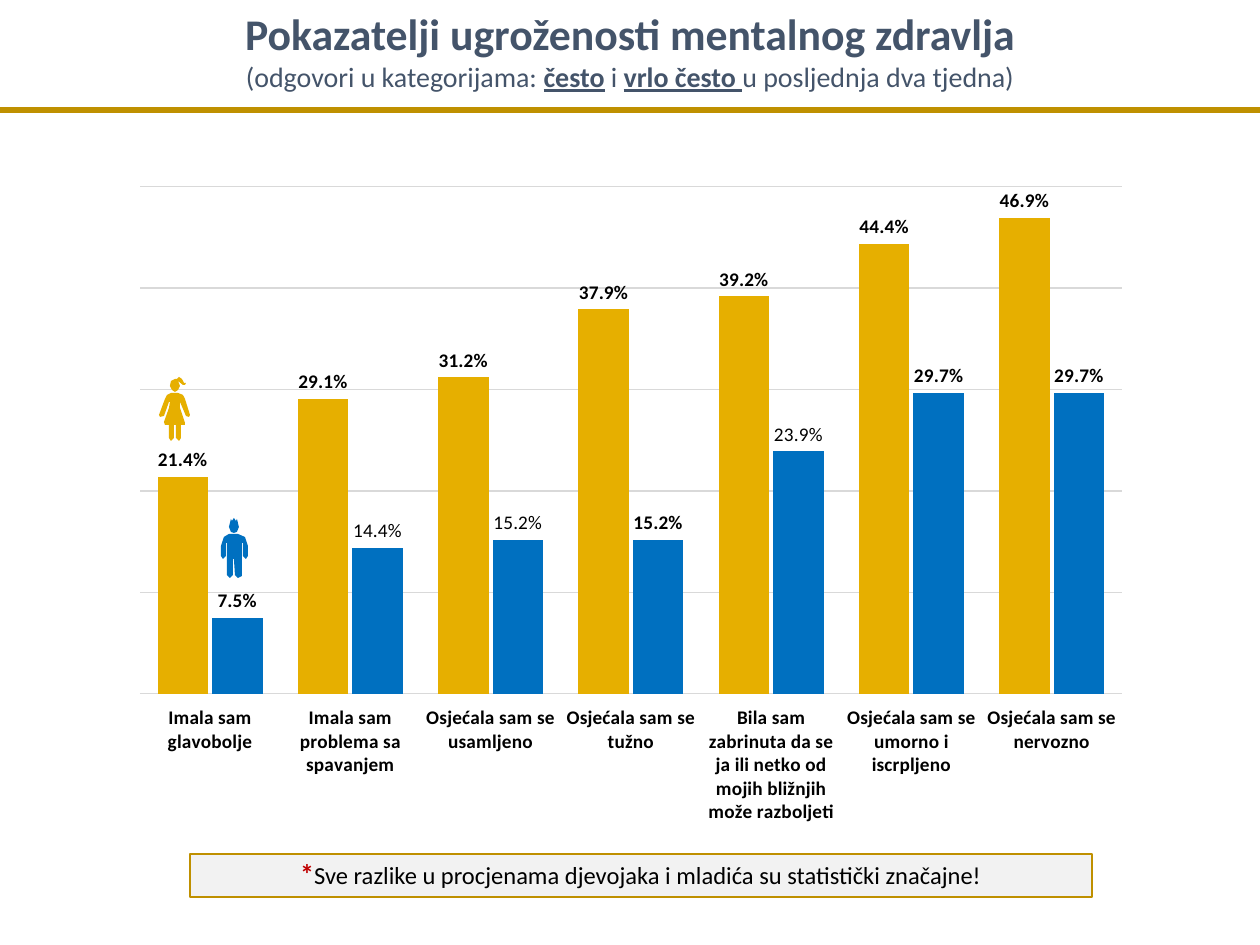
"""Build a slide that compares signs of strained mental health by gender."""
from lxml import etree
from pptx import Presentation
from pptx.chart.data import CategoryChartData
from pptx.dml.color import RGBColor
from pptx.enum.chart import XL_CHART_TYPE, XL_LABEL_POSITION, XL_TICK_LABEL_POSITION, XL_TICK_MARK
from pptx.enum.shapes import MSO_CONNECTOR, MSO_SHAPE
from pptx.enum.text import MSO_ANCHOR, MSO_AUTO_SIZE, PP_ALIGN
from pptx.oxml.ns import qn
from pptx.util import Emu, Inches, Pt

COLUMN = XL_CHART_TYPE.COLUMN_CLUSTERED
OUTSIDE = XL_LABEL_POSITION.OUTSIDE_END
LOW = XL_TICK_LABEL_POSITION.LOW
NO_TICK = XL_TICK_MARK.NONE
STRAIGHT = MSO_CONNECTOR.STRAIGHT
RECT = MSO_SHAPE.RECTANGLE
CENTER = PP_ALIGN.CENTER
MIDDLE = MSO_ANCHOR.MIDDLE
NO_FIT = MSO_AUTO_SIZE.NONE

SCALE = 914400 / 126
FONT = "Calibri"
COLORS = {
    "title": "44546A", "gold": "BF9000", "girl": "E6AF00", "boy": "0070C0",
    "grid": "D9D9D9", "box": "F2F2F2", "star": "C00000", "text": "000000",
}
TITLE = [
    [("Pokazatelji ugroženosti mentalnog zdravlja", 25, True, False)],
    [
        ("(odgovori u kategorijama: ", 16, False, False),
        ("često", 16, True, True),
        (" i ", 16, False, False),
        ("vrlo često ", 16, True, True),
        ("u posljednja dva tjedna)", 16, False, False),
    ],
]
CATS = [
    "Imala sam glavobolje",
    "Imala sam problema sa spavanjem",
    "Osjećala sam se usamljeno",
    "Osjećala sam se tužno",
    "Bila sam zabrinuta da se ja ili netko od mojih bližnjih može razboljeti",
    "Osjećala sam se umorno i iscrpljeno",
    "Osjećala sam se nervozno",
]
SERIES = [
    ("Series 1", "girl", [0.214, 0.291, 0.312, 0.379, 0.392, 0.444, 0.469], []),
    ("Series 2", "boy", [0.075, 0.144, 0.152, 0.152, 0.239, 0.297, 0.297], [1, 2, 4]),
]
PLOT = {"x": 0.006, "y": 0.009, "w": 0.99, "h": 0.786}
GIRL = [
    [(170, 386), (171, 381), (175, 379), (177, 379), (179, 377), (182, 379),
     (184, 383), (186, 383), (185, 385), (183, 385), (178, 381), (180, 386),
     (178, 390), (175, 392), (172, 390)],
    [(190, 415), (185, 399), (183, 395), (178, 393), (171, 393), (167, 395),
     (165, 399), (159, 415), (160, 417), (164, 416), (169, 402), (170, 402),
     (169, 408), (164, 422), (165, 425), (169, 425), (169, 438), (171, 441),
     (174, 438), (174, 425), (176, 425), (176, 438), (179, 441), (181, 438),
     (181, 425), (185, 425), (185, 423), (180, 408), (180, 402), (186, 416),
     (189, 417)],
]
BOY = [
    [(230, 523), (231, 519), (232, 521), (234, 518), (236, 521), (237, 519),
     (238, 523), (239, 527), (237, 532), (234, 533), (231, 532), (229, 527)],
    [(238, 534), (229, 534), (224, 537), (221, 546), (221, 556), (223, 559),
     (226, 556), (226, 543), (227, 543), (227, 575), (230, 578), (233, 575),
     (233, 559), (234, 559), (235, 575), (238, 578), (242, 576), (242, 543),
     (243, 543), (243, 556), (246, 559), (248, 556), (248, 546), (245, 537)],
]


def px(num):
    """Turn pixels into EMU."""
    return Emu(round(num * SCALE))


def rgb(name):
    """Look up a colour by name."""
    return RGBColor.from_string(COLORS[name])


def style(font, size, color, bold=False, under=False):
    """Set the looks of a font."""
    font.name, font.size, font.bold, font.underline = FONT, Pt(size), bold, under
    font.color.rgb = rgb(color)


def add_run(para, text, size, color, bold=False, under=False):
    """Add one styled run to a paragraph."""
    run = para.add_run()
    run.text = text
    style(run.font, size, color, bold, under)


def stroke(line, color, width):
    """Set the colour and width of a line."""
    line.color.rgb = rgb(color)
    line.width = Pt(width)


def set_title(slide):
    """Place the title and fill in its two lines."""
    title = slide.shapes.title
    title.left, title.top, title.width, title.height = map(px, (0, 0, 1260, 100))
    frame = title.text_frame
    frame.auto_size, frame.word_wrap, frame.vertical_anchor = NO_FIT, True, MIDDLE
    for num, runs in enumerate(TITLE):
        para = frame.add_paragraph() if num else frame.paragraphs[0]
        para.alignment = CENTER
        for text, size, bold, under in runs:
            add_run(para, text, size, "title", bold, under)


def add_rule(slide, top):
    """Draw a rule across the slide."""
    rule = slide.shapes.add_connector(STRAIGHT, px(0), px(top), px(1260), px(top))
    stroke(rule.line, "gold", 3)
    etree.SubElement(rule._element.spPr, qn("a:effectLst"))


def set_plot(chart):
    """Fix the inner plot area within the chart."""
    area = chart._chartSpace.chart.plotArea
    for old in area.findall(qn("c:layout")):
        area.remove(old)
    layout = etree.Element(qn("c:layout"))
    area.insert(0, layout)
    manual = etree.SubElement(layout, qn("c:manualLayout"))
    rules = {"layoutTarget": "inner", "xMode": "edge", "yMode": "edge", **PLOT}
    for tag, val in rules.items():
        etree.SubElement(manual, qn("c:" + tag)).set("val", str(val))


def set_axes(chart):
    """Format the category axis and the hidden value axis."""
    cat, val = chart.category_axis, chart.value_axis
    cat.major_tick_mark = cat.minor_tick_mark = NO_TICK
    cat.tick_label_position = LOW
    style(cat.tick_labels.font, 11, "text", True)
    stroke(cat.format.line, "grid", 0.75)
    val.minimum_scale, val.maximum_scale, val.major_unit = 0, 0.5, 0.1
    val.has_major_gridlines = True
    stroke(val.major_gridlines.format.line, "grid", 0.75)
    val.visible = False


def set_bars(bars, color, vals, light):
    """Colour and label one series, with some labels in light type."""
    bars.format.fill.solid()
    bars.format.fill.fore_color.rgb = rgb(color)
    bars.invert_if_negative = False
    tags = bars.data_labels
    tags.show_value, tags.position = True, OUTSIDE
    tags.number_format, tags.number_format_is_linked = "0.0%", False
    style(tags.font, 11, "text", True)
    for num in light:
        tag = bars.points[num].data_label
        add_run(tag.text_frame.paragraphs[0], f"{vals[num]:.1%}", 11, "text")
        tag.position = OUTSIDE


def add_bars(slide, box):
    """Add the column chart."""
    data = CategoryChartData(number_format="0.0%")
    data.categories = CATS
    for name, _, vals, _ in SERIES:
        data.add_series(name, vals)
    chart = slide.shapes.add_chart(COLUMN, *map(px, box), data).chart
    chart.has_legend = chart.has_title = False
    style(chart.font, 10, "text")
    plot = chart.plots[0]
    plot.gap_width, plot.overlap, plot.vary_by_categories = 70, -8, False
    set_axes(chart)
    set_plot(chart)
    for bars, (_, color, vals, light) in zip(plot.series, SERIES):
        set_bars(bars, color, vals, light)


def add_figure(slide, parts, color):
    """Draw a figure from closed outlines."""
    first, *rest = parts
    pen = slide.shapes.build_freeform(*first[0], scale=SCALE)
    pen.add_line_segments(first[1:])
    for part in rest:
        pen.move_to(*part[0])
        pen.add_line_segments(part[1:])
    shape = pen.convert_to_shape()
    shape.shadow.inherit = False
    shape.fill.solid()
    shape.fill.fore_color.rgb = rgb(color)
    shape.line.fill.background()


def add_note(slide, box):
    """Add the framed note below the chart."""
    shape = slide.shapes.add_shape(RECT, *map(px, box))
    shape.shadow.inherit = False
    shape.fill.solid()
    shape.fill.fore_color.rgb = rgb("box")
    stroke(shape.line, "gold", 0.75)
    shape.text_frame.word_wrap = True
    shape.text_frame.vertical_anchor = MIDDLE
    para = shape.text_frame.paragraphs[0]
    para.alignment, para.line_spacing = CENTER, 0.9
    props = para._p.get_or_add_pPr()
    props.set("marL", str(Inches(0.1)))
    props.set("indent", str(-Inches(0.1)))
    add_run(para, "*", 16, "star", True)
    add_run(para, "Sve razlike u procjenama djevojaka i mladića su statistički značajne!", 14, "text")


def main():
    """Build and save the slide."""
    deck = Presentation()
    deck.slide_width, deck.slide_height = px(1260), px(945)
    slide = deck.slides.add_slide(deck.slide_layouts[5])
    set_title(slide)
    add_rule(slide, 110)
    add_bars(slide, (134, 181, 992, 645))
    add_figure(slide, GIRL, "girl")
    add_figure(slide, BOY, "boy")
    add_note(slide, (190, 854, 902, 43))
    deck.save("out.pptx")


if __name__ == "__main__":
    main()
